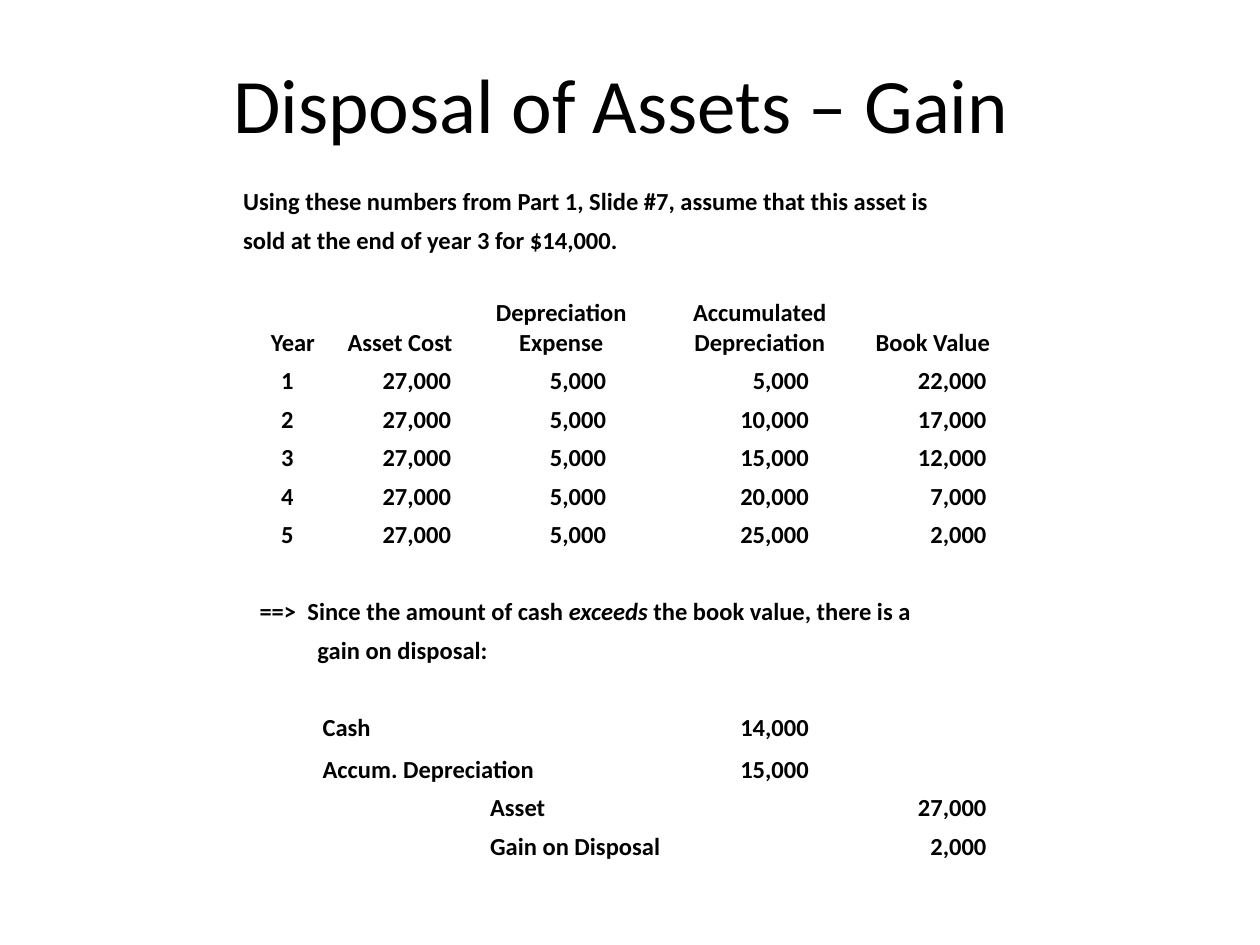
from dataclasses import dataclass

from lxml.etree import SubElement
from pptx import Presentation
from pptx.dml.color import RGBColor
from pptx.enum.text import MSO_ANCHOR as Anchor, PP_ALIGN as Align
from pptx.oxml.ns import qn
from pptx.util import Inches, Pt

BLACK = RGBColor(0x00, 0x00, 0x00)
FONT = "Calibri"
BODY_SIZE = Pt(14)
TITLE_SIZE = Pt(44)
THIN_MARGIN = 0.01
LABEL_INDENT = 0.05

# Grid of the table, in inches
COLUMN_WIDTHS = (0.59, 1.33, 1.23, 0.28, 1.36, 1.39)
YEAR, COST, EXPENSE, GAP, ACCUMULATED, BOOK = range(6)
NUMBER_MARGINS = {YEAR: 0.18, COST: 0.26, EXPENSE: 0.26, ACCUMULATED: 0.29, BOOK: 0.27}
ROW_COUNT = 17
TABLE_HEIGHT = 5.42
SPECIAL_ROWS = {3: 0.5, 14: 0.33}
ROW_HEIGHT = (TABLE_HEIGHT - sum(SPECIAL_ROWS.values())) / (ROW_COUNT - len(SPECIAL_ROWS))


@dataclass(frozen=True)
class Entry:
    row: int
    column: int
    runs: tuple[str, ...]
    span: int = 1
    align: Align = Align.LEFT
    left: float = THIN_MARGIN
    right: float = THIN_MARGIN
    italic_run: int = -1
    hanging: float = 0


def number(row: int, column: int, value: int) -> Entry:
    return Entry(row, column, (f"{value:,}",), align=Align.RIGHT, right=NUMBER_MARGINS[column])


def label(row: int, column: int, wording: str, span: int = 1) -> Entry:
    return Entry(row, column, (wording,), span, left=LABEL_INDENT)


def style_run(run, size: Pt, bold: bool = False, italic: bool = False) -> None:
    run.font.name = FONT
    run.font.size = size
    run.font.bold = bold
    run.font.italic = italic
    run.font.color.rgb = BLACK


def write_entry(table, entry: Entry) -> None:
    cell = table.cell(entry.row, entry.column)
    if entry.span > 1:
        cell.merge(table.cell(entry.row, entry.column + entry.span - 1))
    cell.margin_left = Inches(entry.left)
    cell.margin_right = Inches(entry.right)
    paragraph = cell.text_frame.paragraphs[0]
    paragraph.alignment = entry.align
    if entry.hanging:
        properties = paragraph._p.get_or_add_pPr()
        properties.set("marL", str(Inches(entry.hanging)))
        properties.set("indent", str(-Inches(entry.hanging)))
    for index, wording in enumerate(entry.runs):
        run = paragraph.add_run()
        run.text = wording
        style_run(run, BODY_SIZE, bold=True, italic=index == entry.italic_run)


def add_plain_table(slide, left: float, top: float):
    table = slide.shapes.add_table(
        ROW_COUNT, len(COLUMN_WIDTHS), Inches(left), Inches(top),
        Inches(sum(COLUMN_WIDTHS)), Inches(TABLE_HEIGHT)).table
    table.first_row = table.horz_banding = False
    for column, width in zip(table.columns, COLUMN_WIDTHS):
        column.width = Inches(width)
    for index, row in enumerate(table.rows):
        row.height = Inches(SPECIAL_ROWS.get(index, ROW_HEIGHT))
    for cell in table.iter_cells():
        cell.fill.background()
        cell.vertical_anchor = Anchor.BOTTOM
        cell.margin_left = cell.margin_right = cell.margin_top = Inches(THIN_MARGIN)
        cell.margin_bottom = 0
        # Empty cells keep the body size, so their rows do not grow
        end = SubElement(cell.text_frame.paragraphs[0]._p, qn("a:endParaRPr"))
        end.set("sz", str(int(BODY_SIZE.pt * 100)))
    return table


def depreciation_entries(first_row: int, cost: int, expense: int, years: int) -> list[Entry]:
    entries = []
    for year in range(1, years + 1):
        total = expense * year
        values = {YEAR: year, COST: cost, EXPENSE: expense,
                  ACCUMULATED: total, BOOK: cost - total}
        entries += [number(first_row + year - 1, column, value)
                    for column, value in values.items()]
    return entries


INTRODUCTION = [
    Entry(0, YEAR, ("Using these numbers from Part 1, Slide #7, assume that this asset is",), 6),
    Entry(1, YEAR, ("sold at the end of year 3 for $14,000.",), 3),
]
HEADINGS = [Entry(3, YEAR, ("Year",), align=Align.RIGHT)] + [
    Entry(3, column, (heading,), align=Align.CENTER)
    for column, heading in (
        (COST, "Asset Cost"), (EXPENSE, "Depreciation Expense"),
        (ACCUMULATED, "Accumulated Depreciation"), (BOOK, "Book Value"))
]
CONCLUSION = [
    Entry(10, YEAR, ("==>\tSince the amount of cash ", "exceeds",
                     " the book value, there is a"),
          6, left=0.14, italic_run=1, hanging=0.38),
    Entry(11, COST, ("gain on disposal:",), 2),
]
JOURNAL = [
    label(13, COST, "Cash"), number(13, ACCUMULATED, 14000),
    label(14, COST, "Accum. Depreciation", 2), number(14, ACCUMULATED, 15000),
    label(15, EXPENSE, "Asset"), number(15, BOOK, 27000),
    label(16, EXPENSE, "Gain on Disposal", 3), number(16, BOOK, 2000),
]


def main() -> None:
    deck = Presentation()
    deck.slide_width, deck.slide_height = Inches(10), Inches(7.5)
    slide = deck.slides.add_slide(deck.slide_layouts[5])

    # Title
    title = slide.shapes.title
    title.left, title.top = int(deck.slide_width * 0.05), int(deck.slide_height * 0.04)
    title.width, title.height = int(deck.slide_width * 0.9), Inches(1.03)
    title.text_frame.vertical_anchor = Anchor.MIDDLE
    heading = title.text_frame.paragraphs[0]
    heading.alignment = Align.CENTER
    run = heading.add_run()
    run.text = "Disposal of Assets – Gain "
    style_run(run, TITLE_SIZE)

    # Depreciation schedule and journal entry
    table = add_plain_table(slide, 1.92, 1.42)
    schedule = depreciation_entries(4, cost=27000, expense=5000, years=5)
    for entry in INTRODUCTION + HEADINGS + schedule + CONCLUSION + JOURNAL:
        write_entry(table, entry)

    deck.save("out.pptx")


if __name__ == "__main__":
    main()
